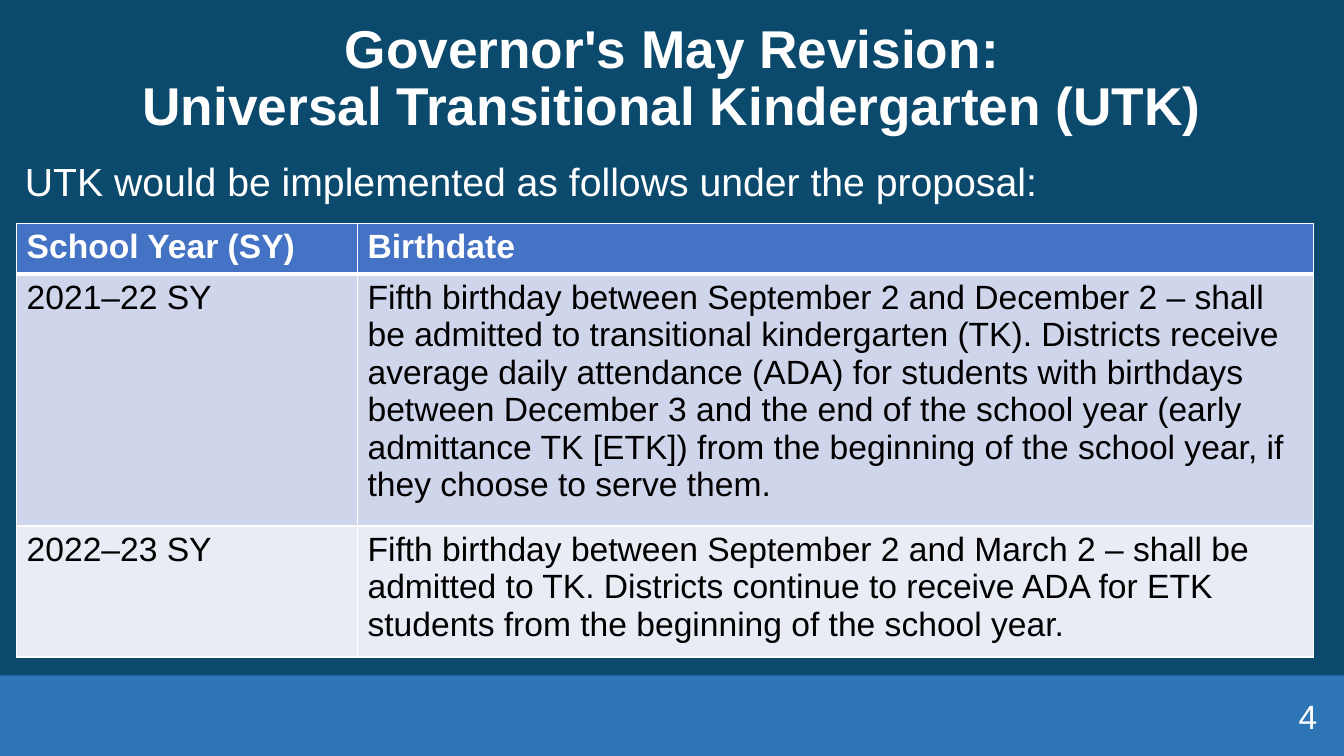
from dataclasses import dataclass

from lxml import etree
from pptx import Presentation
from pptx.dml.color import RGBColor
from pptx.enum.shapes import MSO_SHAPE
from pptx.enum.text import MSO_ANCHOR, PP_ALIGN
from pptx.oxml.ns import qn
from pptx.slide import Slide
from pptx.table import _Cell
from pptx.text.text import _Paragraph
from pptx.util import Cm, Pt

RECTANGLE = MSO_SHAPE.RECTANGLE
TOP, MIDDLE = MSO_ANCHOR.TOP, MSO_ANCHOR.MIDDLE
LEFT, CENTER, RIGHT = PP_ALIGN.LEFT, PP_ALIGN.CENTER, PP_ALIGN.RIGHT

NAVY = RGBColor(0x0C, 0x4A, 0x6D)
FOOTER_BLUE = RGBColor(0x2E, 0x75, 0xB6)
HEADER_BLUE = RGBColor(0x44, 0x72, 0xC4)
BAND_DARK = RGBColor(0xCF, 0xD5, 0xEA)
BAND_LIGHT = RGBColor(0xE9, 0xEB, 0xF5)
WHITE = RGBColor(0xFF, 0xFF, 0xFF)
BLACK = RGBColor(0x00, 0x00, 0x00)

FONT = "Arial"
SLIDE_WIDTH, SLIDE_HEIGHT = Cm(33.87), Cm(19.05)
FOOTER_HEIGHT = Cm(2.03)
COLUMN_WIDTHS = (8.59, 24.1)


@dataclass(frozen=True)
class TextBlock:
    lines: tuple[str, ...]
    left: float
    top: float
    width: float
    height: float
    size: float
    alignment: PP_ALIGN = LEFT
    anchor: MSO_ANCHOR = TOP
    bold: bool = False
    line_spacing: float = 1.0


@dataclass(frozen=True)
class TableRow:
    texts: tuple[str, str]
    height: float
    fill: RGBColor
    color: RGBColor = BLACK
    bold: bool = False
    top_line: float = 1
    bottom_line: float = 1


TEXT_BLOCKS = (
    TextBlock(
        ("Governor's May Revision:", "Universal Transitional Kindergarten (UTK)"),
        0.43, 0.53, 33.02, 2.97, 38, CENTER, MIDDLE, True, 0.9,
    ),
    TextBlock(
        ("UTK would be implemented as follows under the proposal:",),
        0.38, 4.06, 33.02, 1.32, 28, line_spacing=0.8,
    ),
    TextBlock(("4",), 25.83, 17.53, 7.62, 1.02, 24, RIGHT, MIDDLE),
)

TABLE_ROWS = (
    TableRow(
        ("School Year (SY)", "Birthdate"),
        1.19, HEADER_BLUE, WHITE, True, bottom_line=3,
    ),
    TableRow(
        (
            "2021–22 SY",
            "Fifth birthday between September 2 and December 2 – shall be admitted "
            "to transitional kindergarten (TK). Districts receive average daily "
            "attendance (ADA) for students with birthdays between December 3 and "
            "the end of the school year (early admittance TK [ETK]) from the "
            "beginning of the school year, if they choose to serve them.",
        ),
        5.92, BAND_DARK, top_line=3,
    ),
    TableRow(
        (
            "2022–23 SY",
            "Fifth birthday between September 2 and March 2 – shall be admitted to "
            "TK. Districts continue to receive ADA for ETK students from the "
            "beginning of the school year.",
        ),
        3.07, BAND_LIGHT,
    ),
)


def add_run(paragraph: _Paragraph, text: str, size: float, color: RGBColor, bold: bool) -> None:
    run = paragraph.add_run()
    run.text = text
    run.font.name = FONT
    run.font.size = Pt(size)
    run.font.bold = bold
    run.font.color.rgb = color


def add_footer_band(slide: Slide) -> None:
    band = slide.shapes.add_shape(
        RECTANGLE, 0, SLIDE_HEIGHT - FOOTER_HEIGHT, SLIDE_WIDTH, FOOTER_HEIGHT
    )
    band.shadow.inherit = False
    band.fill.solid()
    band.fill.fore_color.rgb = FOOTER_BLUE
    band.line.fill.background()


def add_text_block(slide: Slide, block: TextBlock) -> None:
    box = slide.shapes.add_textbox(
        Cm(block.left), Cm(block.top), Cm(block.width), Cm(block.height)
    )
    frame = box.text_frame
    frame.word_wrap = True
    frame.vertical_anchor = block.anchor
    paragraph = frame.paragraphs[0]
    paragraph.alignment = block.alignment
    paragraph.line_spacing = block.line_spacing
    for index, line in enumerate(block.lines):
        if index:
            paragraph.add_line_break()
        add_run(paragraph, line, block.size, WHITE, block.bold)


def add_borders(cell: _Cell, row: TableRow) -> None:
    properties = cell._tc.get_or_add_tcPr()
    borders = (("lnL", 1), ("lnR", 1), ("lnT", row.top_line), ("lnB", row.bottom_line))
    for tag, width in borders:
        line = etree.SubElement(properties, qn(f"a:{tag}"), w=str(Pt(width)))
        fill = etree.SubElement(line, qn("a:solidFill"))
        etree.SubElement(fill, qn("a:srgbClr"), val=str(WHITE))


def add_schedule_table(slide: Slide) -> None:
    frame = slide.shapes.add_table(
        len(TABLE_ROWS), len(COLUMN_WIDTHS), Cm(0.42), Cm(5.63),
        Cm(sum(COLUMN_WIDTHS)), Cm(sum(row.height for row in TABLE_ROWS)),
    )
    table = frame.table
    table.horz_banding = False
    for column, width in zip(table.columns, COLUMN_WIDTHS):
        column.width = Cm(width)
    for row_index, row in enumerate(TABLE_ROWS):
        table.rows[row_index].height = Cm(row.height)
        for column_index, text in enumerate(row.texts):
            cell = table.cell(row_index, column_index)
            add_borders(cell, row)
            cell.fill.solid()
            cell.fill.fore_color.rgb = row.fill
            add_run(cell.text_frame.paragraphs[0], text, 24, row.color, row.bold)


def main() -> None:
    presentation = Presentation()
    presentation.slide_width = SLIDE_WIDTH
    presentation.slide_height = SLIDE_HEIGHT
    slide = presentation.slides.add_slide(presentation.slide_layouts[6])
    slide.background.fill.solid()
    slide.background.fill.fore_color.rgb = NAVY
    add_footer_band(slide)
    for block in TEXT_BLOCKS:
        add_text_block(slide, block)
    add_schedule_table(slide)
    presentation.save("out.pptx")


if __name__ == "__main__":
    main()
